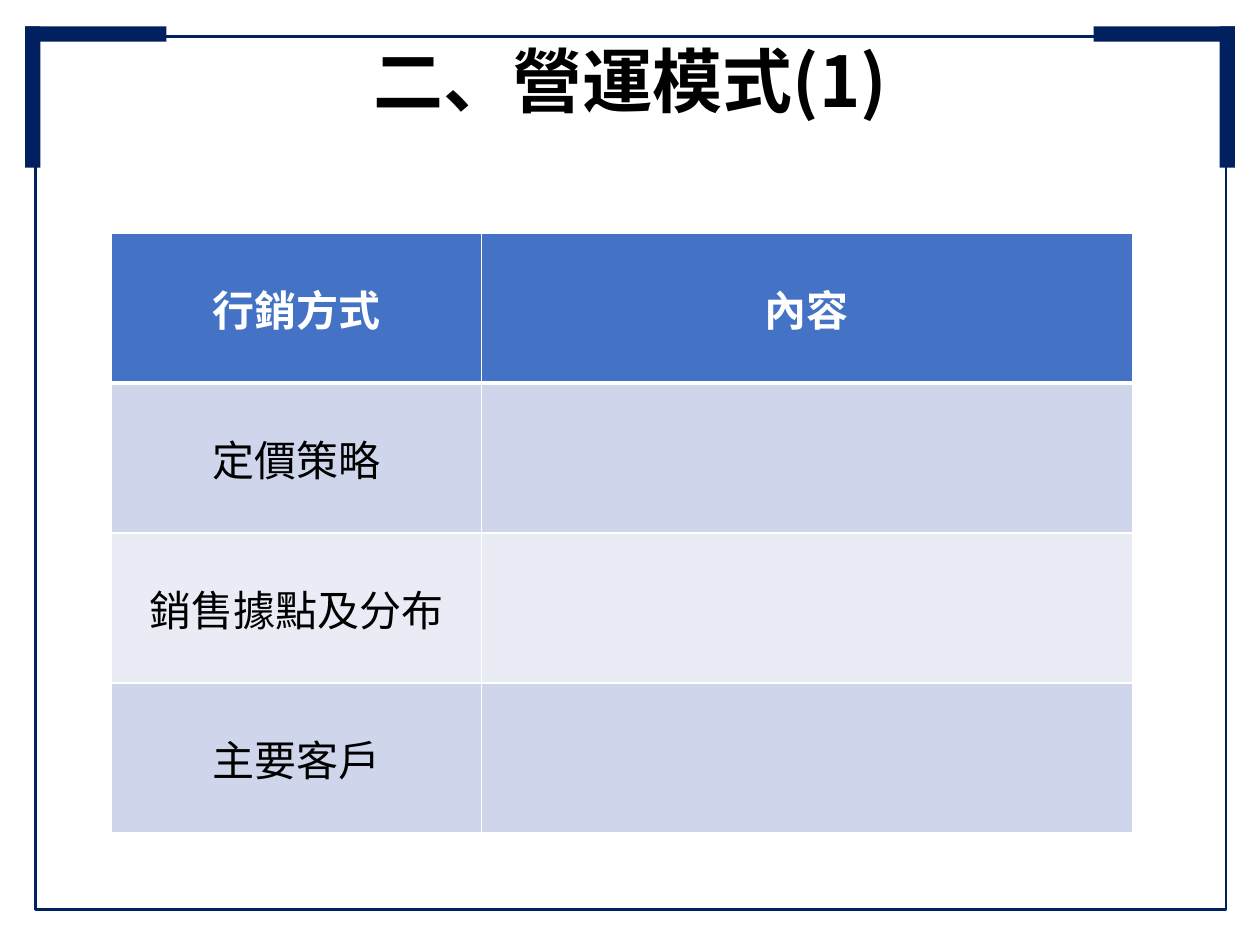
from lxml import etree
from pptx import Presentation
from pptx.dml.color import RGBColor
from pptx.enum.shapes import MSO_SHAPE
from pptx.enum.text import MSO_ANCHOR, PP_ALIGN
from pptx.oxml.ns import qn
from pptx.util import Inches, Pt

NAVY = RGBColor(0x00, 0x20, 0x60)
BLUE = RGBColor(0x44, 0x72, 0xC4)
BAND_DARK = RGBColor(0xCF, 0xD5, 0xEA)
BAND_LIGHT = RGBColor(0xE9, 0xEB, 0xF5)
WHITE = RGBColor(0xFF, 0xFF, 0xFF)
BLACK = RGBColor(0x00, 0x00, 0x00)
FONT = "Noto Sans CJK SC"

ROWS = [
    ("行銷方式", "內容"),
    ("定價策略", ""),
    ("銷售據點及分布", ""),
    ("主要客戶", ""),
]


def style_para(para, size, color, bold):
    para.alignment = PP_ALIGN.CENTER
    for span in para.runs:
        span.font.size = Pt(size)
        span.font.bold = bold
        span.font.color.rgb = color
        span.font.name = FONT
        east_asian = etree.SubElement(span.font._element, qn("a:ea"))
        east_asian.set("typeface", FONT)


def add_rectangle(page, left, top, width, height):
    box = page.shapes.add_shape(
        MSO_SHAPE.RECTANGLE, Inches(left), Inches(top), Inches(width), Inches(height)
    )
    box.shadow.inherit = False
    return box


def add_frame(page, left, top, width, height):
    frame = add_rectangle(page, left, top, width, height)
    frame.fill.background()
    frame.line.color.rgb = NAVY
    frame.line.width = Pt(1.5)


def add_corners(page, left, top, width, arm, thickness):
    right = left + width
    bars = [
        (left, top, arm, thickness),
        (left, top, thickness, arm),
        (right - arm, top, arm, thickness),
        (right - thickness, top, thickness, arm),
    ]
    for bar_box in bars:
        bar = add_rectangle(page, *bar_box)
        bar.fill.solid()
        bar.fill.fore_color.rgb = NAVY
        bar.line.fill.background()


def add_title(page, left, top, width, height, text):
    box = page.shapes.add_textbox(Inches(left), Inches(top), Inches(width), Inches(height))
    box.text_frame.word_wrap = True
    box.text_frame.vertical_anchor = MSO_ANCHOR.MIDDLE
    box.text_frame.text = text
    style_para(box.text_frame.paragraphs[0], 40, BLACK, True)


def set_borders(cell, top, bottom):
    properties = cell._tc.get_or_add_tcPr()
    for side, points in (("L", 1), ("R", 1), ("T", top), ("B", bottom)):
        line = etree.SubElement(properties, qn(f"a:ln{side}"), w=str(Pt(points)))
        fill = etree.SubElement(line, qn("a:solidFill"))
        etree.SubElement(fill, qn("a:srgbClr"), val=str(WHITE))


def add_marketing_table(page, left, top, column_widths, row_height):
    table = page.shapes.add_table(
        len(ROWS), len(column_widths), Inches(left), Inches(top),
        Inches(sum(column_widths)), Inches(row_height * len(ROWS)),
    ).table
    for column, width in zip(table.columns, column_widths):
        column.width = Inches(width)
    for row_index, texts in enumerate(ROWS):
        header = row_index == 0
        band = BAND_DARK if row_index % 2 else BAND_LIGHT
        for column_index, text in enumerate(texts):
            cell = table.cell(row_index, column_index)
            set_borders(cell, 3 if row_index == 1 else 1, 3 if header else 1)
            cell.fill.solid()
            cell.fill.fore_color.rgb = BLUE if header else band
            cell.vertical_anchor = MSO_ANCHOR.MIDDLE
            if text:
                cell.text_frame.text = text
                style_para(
                    cell.text_frame.paragraphs[0], 24, WHITE if header else BLACK, header
                )


def main():
    deck = Presentation()
    deck.slide_width = Inches(10)
    deck.slide_height = Inches(7.5)
    page = deck.slides.add_slide(deck.slide_layouts[6])
    add_frame(page, 0.28, 0.29, 9.45, 6.93)
    add_corners(page, 0.2, 0.21, 9.6, 1.12, 0.12)
    add_marketing_table(page, 0.88, 1.85, (2.94, 5.17), 1.19)
    add_title(page, 0.5, 0.13, 9, 1.01, "二、營運模式(1)")
    deck.save("out.pptx")


if __name__ == "__main__":
    main()
